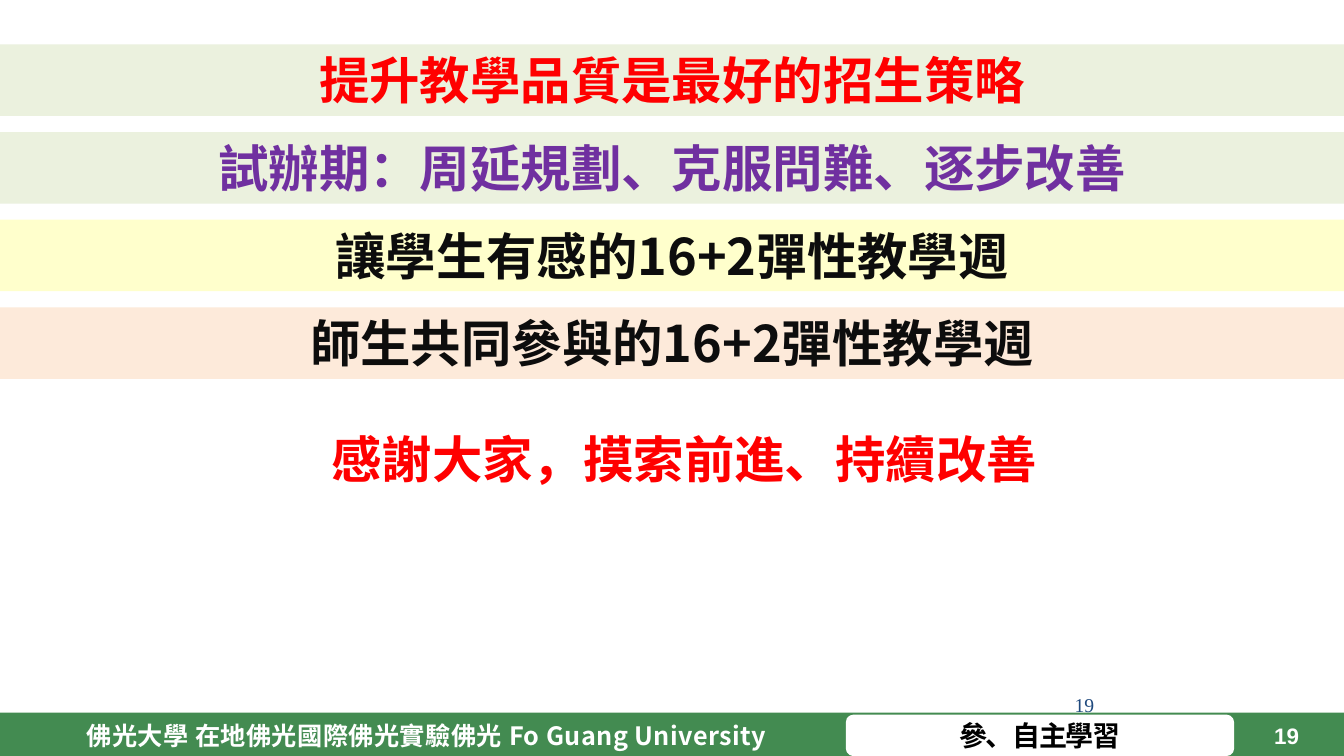
from lxml import etree
from pptx import Presentation
from pptx.dml.color import RGBColor
from pptx.enum import shapes, text
from pptx.oxml.ns import qn
from pptx.util import Inches, Pt

WHITE = RGBColor(0xFF, 0xFF, 0xFF)
BLACK = RGBColor(0x00, 0x00, 0x00)
INK = RGBColor(0x0D, 0x0D, 0x0D)
RED = RGBColor(0xFF, 0x00, 0x00)
PURPLE = RGBColor(0x70, 0x30, 0xA0)
NAVY = RGBColor(0x1F, 0x49, 0x7D)
GREEN = RGBColor(0x43, 0x8B, 0x51)
PALE_GREEN = RGBColor(0xEB, 0xF1, 0xDE)
PALE_YELLOW = RGBColor(0xFF, 0xFF, 0xCC)
PALE_ORANGE = RGBColor(0xFD, 0xEA, 0xDA)

CJK = "Noto Sans CJK SC"
WIDTH = 13.33
BAND_TOP, BAND_STEP, BAND_HEIGHT = 0.44, 0.87, 0.71
BANDS = [
    ("提升教學品質是最好的招生策略", RED, PALE_GREEN),
    ("試辦期：周延規劃、克服問難、逐步改善", PURPLE, PALE_GREEN),
    ("讓學生有感的16+2彈性教學週", INK, PALE_YELLOW),
    ("師生共同參與的16+2彈性教學週", INK, PALE_ORANGE),
]


def write(box, words, size, color, name=CJK, bold=True, centered=True,
          middle=False, spacing=0, wrap=True):
    """Fill a shape with one line; spacing is in hundredths of a point."""
    frame = box.text_frame
    frame.word_wrap = wrap
    frame.vertical_anchor = text.MSO_ANCHOR.MIDDLE if middle else text.MSO_ANCHOR.TOP
    para = frame.paragraphs[0]
    para.text = words
    para.alignment = text.PP_ALIGN.CENTER if centered else text.PP_ALIGN.LEFT
    font = para.font
    font.size, font.bold, font.name = Pt(size), bold, name
    font.color.rgb = color
    properties = para._p.pPr.find(qn("a:defRPr"))
    etree.SubElement(properties, qn("a:ea")).set("typeface", name)
    if spacing:
        properties.set("spc", str(spacing))


def add_block(page, kind, left, top, width, height, fill):
    block = page.shapes.add_shape(
        kind, Inches(left), Inches(top), Inches(width), Inches(height))
    block.shadow.inherit = False
    block.fill.solid()
    block.fill.fore_color.rgb = fill
    block.line.fill.background()
    return block


def add_text(page, left, top, width, height, words, size, color, **style):
    box = page.shapes.add_textbox(
        Inches(left), Inches(top), Inches(width), Inches(height))
    write(box, words, size, color, **style)
    return box


def add_footer(page):
    add_block(page, shapes.MSO_SHAPE.RECTANGLE, 0, 7.07, WIDTH, 0.43, GREEN)
    add_text(page, 12.19, 7.08, 1.14, 0.43, "19", 16, WHITE,
             name="Arial", middle=True)

    section = add_block(page, shapes.MSO_SHAPE.ROUNDED_RECTANGLE,
                        8.4, 7.1, 3.83, 0.39, WHITE)
    section.line.color.rgb = WHITE
    section.line.width = Pt(1.5)
    frame = section.text_frame
    frame.margin_left = frame.margin_right = Inches(0.08)
    frame.margin_top = frame.margin_bottom = Inches(0.04)
    write(section, "參、自主學習", 20, BLACK, middle=True, spacing=-100, wrap=False)

    school = add_text(page, 0.76, 7.06, 7.51, 0.43,
                      "佛光大學 在地佛光國際佛光實驗佛光 Fo Guang University",
                      18, WHITE, centered=False, middle=True, spacing=30)
    school.text_frame.margin_top = Inches(0.08)
    school.text_frame.margin_bottom = Inches(0.04)


def main():
    deck = Presentation()
    deck.slide_width, deck.slide_height = Inches(WIDTH), Inches(7.5)
    page = deck.slides.add_slide(deck.slide_layouts[6])

    add_footer(page)
    add_text(page, 10.56, 6.83, 2.78, 0.5, "19", 14, NAVY,
             name="Times New Roman", bold=False, centered=False)
    add_text(page, 2.73, 4.2, 8.11, BAND_HEIGHT,
             "感謝大家，摸索前進、持續改善", 36, RED)
    for row, (words, color, fill) in enumerate(BANDS):
        band = add_block(page, shapes.MSO_SHAPE.RECTANGLE, 0,
                         BAND_TOP + row * BAND_STEP, WIDTH, BAND_HEIGHT, fill)
        write(band, words, 36, color)

    deck.save("out.pptx")


if __name__ == "__main__":
    main()
